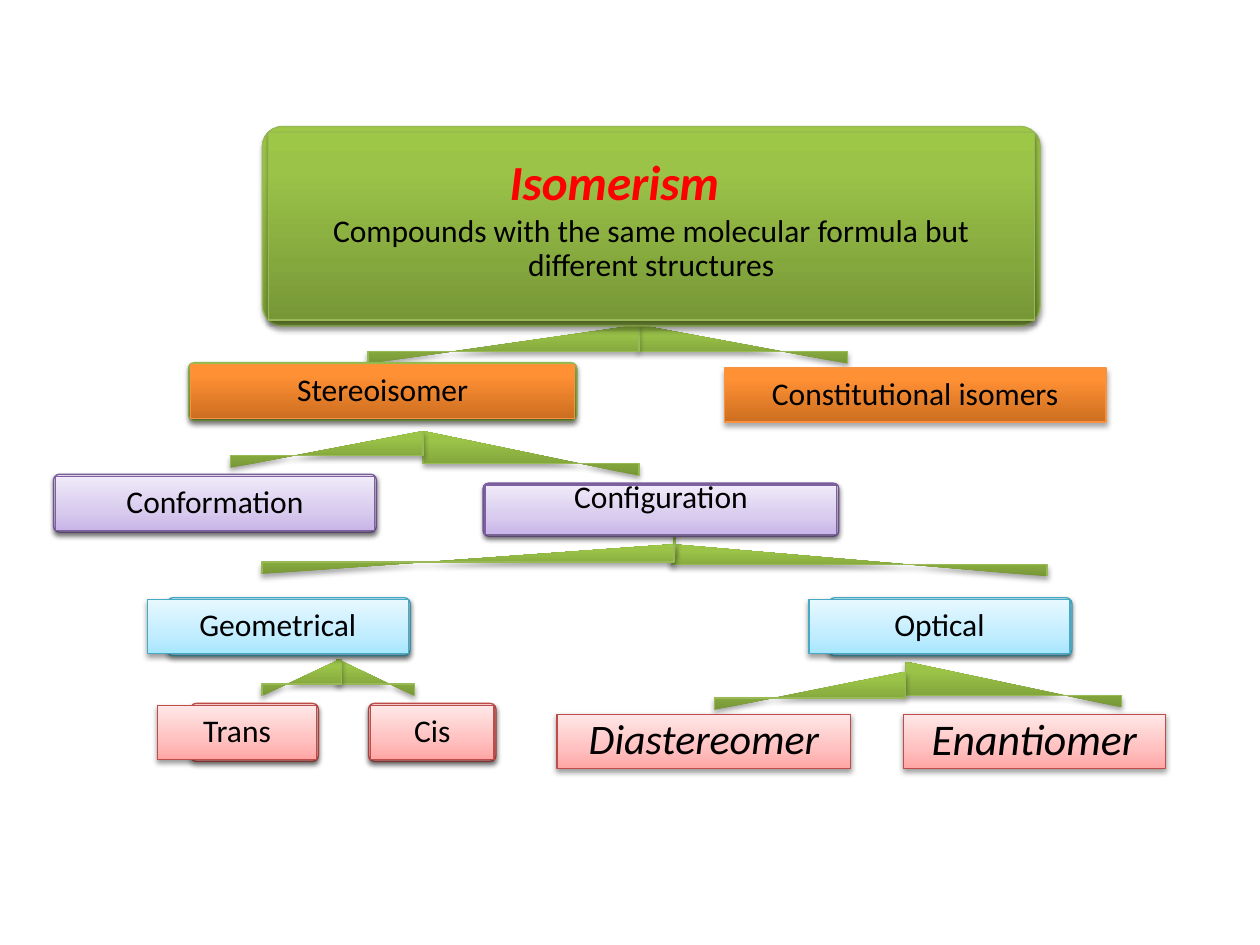
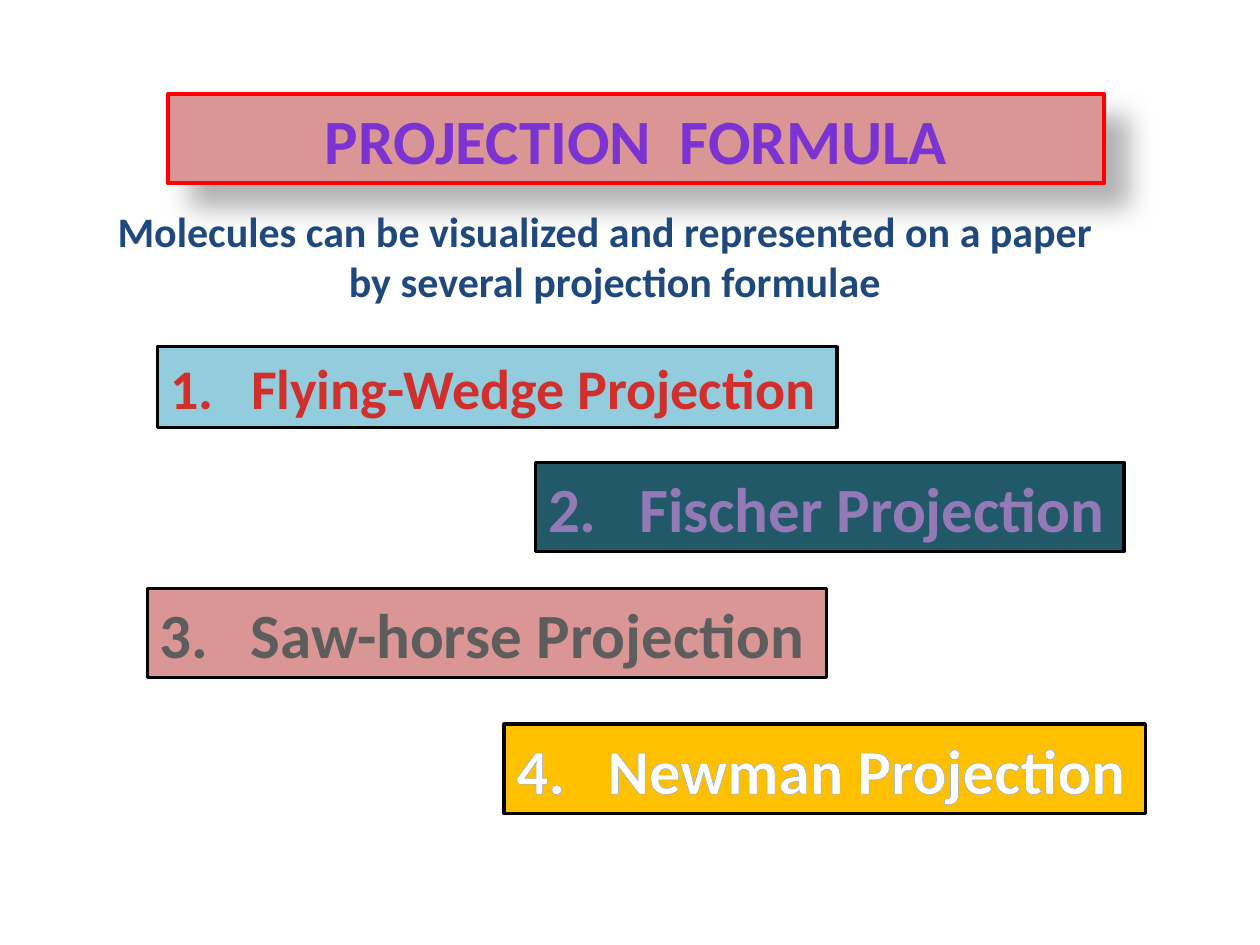
import pptx
import pptx.util
import pptx.dml.color
import pptx.enum.shapes
import pptx.enum.text
import pptx.oxml
import pptx.oxml.ns
from lxml import etree

Cm, Pt = pptx.util.Cm, pptx.util.Pt
KIND = pptx.enum.shapes.MSO_SHAPE
ALIGN = pptx.enum.text.PP_ALIGN
ANCHOR = pptx.enum.text.MSO_ANCHOR
qn = pptx.oxml.ns.qn

FONT = "Calibri"
# Shadows: opacity %, blur pt, distance pt, direction in degrees
DEEP = (35, 3.1, 1.8, 90)
SOFT = (38, 3.1, 1.6, 90)
CAST = (30, 15, 18, 45)

# Gradients: stops, angle
GREEN = ([(0, "779737"), (80, "9BC348"), (100, "9DC746")], 270)
ORANGE = ([(0, "CC6E20"), (80, "FF9034"), (100, "FF9136")], 270)
LILAC = ([(0, "C9B5E8"), (35, "D8CBEE"), (100, "F0EAF9")], 270)
PINK = ([(0, "FFA6A5"), (35, "FFC0BF"), (100, "FFE7E7")], 270)
AQUA = ([(0, "A7E6FF"), (35, "C1EDFF"), (100, "E7F8FF")], 270)

# Styles of the tree: fill, line, shadow
STYLE = {
    "green": (GREEN, "98B955", DEEP),
    "orange": (ORANGE, "F69240", DEEP),
    "lilac": (LILAC, "7D60A0", SOFT),
    "pink": (PINK, "BF4C48", SOFT),
    "aqua": (AQUA, "46AAC5", SOFT),
}

# Branches in cm: start x, start y, knee y, end x
DROP = 0.24
BRANCHES = [
    (12.88, 6.55, 7.09, 17.09),
    (13.54, 10.97, 11.38, 21.11),
    (13.61, 10.57, 11.18, 13.54),
    (6.78, 13.28, 13.79, 8.36),
    (6.88, 13.28, 13.79, 5.28),
    (13.59, 10.97, 11.33, 5.28),
    (8.53, 8.69, 9.35, 12.88),
    (8.53, 8.69, 9.19, 4.65),
    (12.88, 6.55, 7.09, 7.42),
    (18.26, 13.34, 14.02, 22.61),
    (18.26, 13.54, 14.07, 14.4),
]

# Nodes: text, style, place in cm, then what differs from the defaults
NODES = [
    ("Compounds with the same molecular formula but different structures",
     "green", (5.41, 2.67, 15.44, 3.78),
     dict(back="green", pad=0.12, inset=(1.2, 0.25))),
    ("Stereoisomer", "orange", (3.84, 7.35, 7.75, 1.09), dict(back="green")),
    ("Constitutional isomers", "orange", (14.6, 7.42, 7.7, 1.09), {}),
    ("Conformation", "lilac", (1.12, 9.6, 6.43, 1.09), dict(back="lilac")),
    ("Configuration", "lilac", (9.78, 9.78, 7.09, 0.99),
     dict(back="lilac", inset=(0.08, 0.52))),
    ("Geometrical", "aqua", (2.97, 12.09, 5.26, 1.09),
     dict(back="aqua", shift=0.4)),
    ("Optical", "aqua", (16.31, 12.09, 5.26, 1.09),
     dict(back="aqua", shift=0.4)),
    ("Trans", "pink", (3.18, 14.22, 3.2, 1.09), dict(back="pink", shift=0.66)),
    ("Cis", "pink", (7.47, 14.22, 2.49, 1.09), dict(back="pink")),
    ("Diastereomer", "pink", (11.23, 14.4, 5.92, 1.09),
     dict(size=24, italic=True)),
    ("Enantiomer", "pink", (18.21, 14.4, 5.28, 1.09),
     dict(size=25, italic=True)),
]

# Projections: text, place in cm, size, fill, text colour, text outline
FORMS = [
    ("1.\tFlying-Wedge Projection", (3.18, 6.99, 13.69, 1.63), 32, "93CDDD",
     ([(0, "FC7C7A"), (75, "D02F2C"), (100, "C70500")], 90), None),
    ("2.\tFischer Projection", (10.8, 9.32, 11.86, 1.8), 36, "215968",
     ([(0, "B099D2"), (40, "9379B5"), (50, "9379B5"), (68, "9379B5"),
       (100, "B099D2")], 90), None),
    ("3.\tSaw-horse Projection", (2.97, 11.86, 13.69, 1.8), 36, "D99694",
     ([(0, "555555"), (49, "5D5D5D"), (50, "000000"), (95, "000000"),
       (100, "000000")], 90), ("FFFFFF", 1.4)),
    ("4.\tNewman Projection", (10.16, 14.6, 12.93, 1.8), 36, "FFC000",
     "FFFFFF", ("7EA6EA", 2.48)),
]
VIOLET = ([(0, "3D1B67"), (43, "7B34D2"), (48, "7330C4"), (100, "3D1B67")], 90)


def rgb(tone):
    return pptx.dml.color.RGBColor.from_string(tone)


def sub(node, tag, **attrs):
    """Append a DrawingML element to node."""
    return etree.SubElement(node, qn("a:" + tag),
                            {key: str(val) for key, val in attrs.items()})


def paint(fill, holder, tone):
    """Fill with a hex colour or with (stops, angle)."""
    if isinstance(tone, str):
        fill.solid()
        fill.fore_color.rgb = rgb(tone)
        return
    fill.background()
    stops, angle = tone
    grad = pptx.oxml.parse_xml(
        f"<a:gradFill {pptx.oxml.ns.nsdecls('a')} rotWithShape='1'/>")
    rows = sub(grad, "gsLst")
    for pos, color in stops:
        sub(sub(rows, "gs", pos=pos * 1000), "srgbClr", val=color)
    sub(grad, "lin", ang=angle * 60000, scaled=0)
    holder.replace(holder.find(qn("a:noFill")), grad)


def dress(shape, tone, line, shade=None, width=0.75):
    """Give a shape its fill, line and shadow."""
    props = shape._element.spPr
    paint(shape.fill, props, tone)
    shape.line.color.rgb = rgb(line)
    shape.line.width = Pt(width)
    shape.shadow.inherit = False
    if shade:
        alpha, blur, dist, angle = shade
        cast = sub(props.find(qn("a:effectLst")), "outerShdw",
                   blurRad=Pt(blur), dist=Pt(dist), dir=angle * 60000,
                   algn="ctr", rotWithShape=0)
        sub(sub(cast, "srgbClr", val="000000"), "alpha", val=alpha * 1000)


def box(slide, kind, at):
    shape = slide.shapes.add_shape(kind, *map(Cm, at))
    if kind == KIND.ROUNDED_RECTANGLE:
        shape.adjustments[0] = 0.1
    return shape


def write(shape, text, size, tone="000000", bold=False, italic=False,
          edge=None, align=ALIGN.CENTER, wrap=True):
    frame = shape.text_frame
    frame.text = text
    frame.word_wrap = wrap
    for para in frame.paragraphs:
        para.alignment = align
        for run in para.runs:
            font = run.font
            font.name, font.size = FONT, Pt(size)
            font.bold, font.italic = bold, italic
            props = run._r.get_or_add_rPr()
            paint(font.fill, props, tone)
            if edge:
                color, width = edge
                line = sub(props, "ln", w=Pt(width))
                sub(sub(line, "solidFill"), "srgbClr", val=color)
                props.insert(0, line)
    return frame


def branch(slide, x, y, knee, end):
    pen = slide.shapes.build_freeform(Cm(x), Cm(y))
    turns = [(x, knee), (end, knee), (end, knee + DROP)]
    pen.add_line_segments([(Cm(a), Cm(b)) for a, b in turns], close=False)
    dress(pen.convert_to_shape(), *STYLE["green"])


def node(slide, text, style, at, back=None, pad=0.04, shift=None,
         inset=(0.25, 0.25), size=18, italic=False):
    """Draw a labelled box, with a rounded plate behind it if back is set."""
    x, y, w, h = at
    if back:
        left = -pad if shift is None else shift
        plate = (x + left, y - pad, w - left + pad, h + 2 * pad)
        dress(box(slide, KIND.ROUNDED_RECTANGLE, plate), *STYLE[back])
    front = box(slide, KIND.RECTANGLE, at)
    dress(front, *STYLE[style])
    frame = write(front, text, size, italic=italic)
    frame.vertical_anchor = ANCHOR.MIDDLE
    frame.margin_top, frame.margin_bottom = map(Cm, inset)
    para = frame.paragraphs[0]
    para.line_spacing = 0.9
    para.space_after = Pt(0.35 * size)


def tree(slide):
    for row in BRANCHES:
        branch(slide, *row)
    for text, style, at, extra in NODES:
        node(slide, text, style, at, **extra)
    title = slide.shapes.add_textbox(*map(Cm, (9.09, 1.9, 6.99, 2.57)))
    frame = write(title, "Isomerism", 28, "FF0000", True, True,
                  edge=("FFFFFF", 1.4))
    frame.vertical_anchor = ANCHOR.BOTTOM
    frame.margin_bottom = Cm(0.23)
    frame.margin_right = Cm(0.65)


def forms(slide):
    title = box(slide, KIND.RECTANGLE, (3.39, 1.9, 18.87, 1.8))
    dress(title, "D99694", "FF0000", CAST, 2.25)
    write(title, "PROJECTION  FORMULA", 36, VIOLET, True,
          edge=("5E457C", 0.71), wrap=False)
    for text, at, size, fill, tone, edge in FORMS:
        bar = box(slide, KIND.RECTANGLE, at)
        dress(bar, fill, "000000", width=2)
        frame = write(bar, text, size, tone, True, edge=edge,
                      align=ALIGN.LEFT, wrap=False)
        props = frame.paragraphs[0]._p.get_or_add_pPr()
        sub(sub(props, "tabLst"), "tab", pos=Cm(size * 0.051), algn="l")
    intro = slide.shapes.add_textbox(*map(Cm, (2.12, 4.02, 20.55, 2.31)))
    frame = write(intro, "Molecules can be visualized and represented on a "
                  "paper\nby several projection formulae", 24, "1F497D", True)
    frame.paragraphs[0].alignment = ALIGN.LEFT


def main():
    deck = pptx.Presentation()
    deck.slide_width, deck.slide_height = Cm(25.4), Cm(19.05)
    for draw in (tree, forms):
        draw(deck.slides.add_slide(deck.slide_layouts[6]))
    deck.save("out.pptx")


if __name__ == "__main__":
    main()
